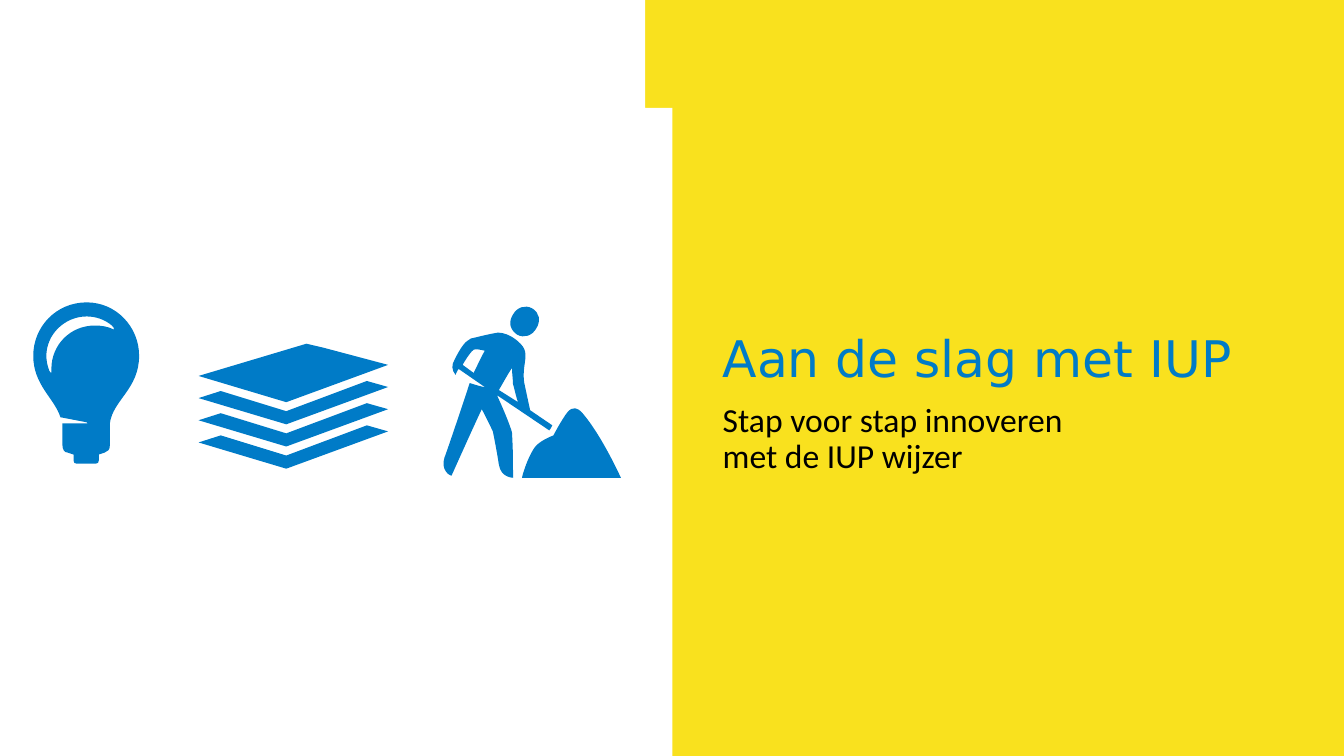
from lxml import etree
from pptx import Presentation
from pptx.dml.color import RGBColor
from pptx.enum.text import MSO_ANCHOR
from pptx.oxml.ns import qn
from pptx.util import Pt

PX = 9144
TOP, BOTTOM = MSO_ANCHOR.TOP, MSO_ANCHOR.BOTTOM
YELLOW = RGBColor(0xF9, 0xE1, 0x1E)
WHITE = RGBColor(0xFF, 0xFF, 0xFF)
BLUE = RGBColor(0x00, 0x7B, 0xC7)
BLACK = RGBColor(0x00, 0x00, 0x00)

PANEL = [(0, 0), (640, 0), (640, 107), (667, 107), (667, 750), (0, 750)]

BULB = [
    (86, 300), (56, 300, 33, 324, 33, 353), (33, 382, 54, 395, 60, 414),
    (86, 419), (87, 419, 87, 420, 87, 420), (62, 420), (62, 442),
    (62, 446, 64, 449, 67, 449), (73, 451), (73, 457),
    (73, 459, 74, 460, 76, 460), (95, 460), (97, 460, 98, 459, 98, 457),
    (98, 451), (104, 449), (107, 448, 109, 446, 109, 442), (109, 420),
    (112, 397, 138, 386, 138, 353), (138, 324, 115, 300, 86, 300),
]
GLINT = [
    (113, 327), (107, 324, 101, 323, 94, 323), (70, 323, 51, 342, 51, 366),
    (51, 367, 51, 368, 51, 370), (51, 370, 49, 369, 49, 368),
    (47, 363, 46, 358, 46, 353), (46, 332, 64, 314, 86, 314),
    (95, 314, 104, 317, 111, 323), (112, 324, 114, 326, 113, 327),
]

SHEET = [(385, 362), (321, 345), (304, 341), (197, 373), (284, 399), (385, 362)]
EDGE = [(284, 30), (219, 10), (197, 17), (284, 43), (385, 6), (364, 0)]
EDGE_TOP, EDGE_GAP, EDGES = 378, 22, 3

HEAD = [
    (513, 332), (520, 336, 528, 333, 532, 326), (537, 318, 535, 310, 528, 306),
    (521, 302, 513, 305, 509, 312), (504, 320, 506, 327, 513, 332),
]
BODY = [
    (493, 392), (545, 427), (546, 426, 547, 424, 548, 422), (526, 407),
    (524, 398, 520, 379, 520, 379), (518, 364, 524, 354, 520, 346),
    (518, 341, 506, 330, 494, 330), (488, 331, 479, 333, 471, 335),
    (468, 335, 467, 336, 464, 338), (459, 341, 453, 353, 451, 357),
    (448, 362, 448, 367, 452, 372), (452, 372, 453, 369, 455, 366),
    (481, 384), (481, 384, 481, 384, 480, 384),
    (475, 383, 466, 380, 466, 380), (461, 396, 442, 452, 441, 454),
    (437, 466, 446, 472, 448, 472), (448, 472, 469, 425, 478, 406),
    (482, 413, 489, 428, 489, 428), (491, 438, 493, 448, 495, 461),
    (497, 474, 509, 474, 509, 474), (509, 455, 509, 447, 508, 429),
    (507, 425, 501, 409, 493, 392),
]
FRONT = [
    (509, 381), (510, 384, 512, 394, 514, 399), (495, 387),
    (499, 380, 504, 371, 508, 365), (508, 370, 509, 377, 509, 381),
]
BACK = [
    (470, 347), (472, 346, 477, 347, 481, 348),
    (477, 355, 473, 364, 470, 370), (459, 362),
    (463, 355, 468, 348, 470, 347),
]
HEAP = [
    (578, 410), (573, 404, 568, 403, 563, 409), (558, 415, 549, 432, 549, 432),
    (549, 432, 538, 436, 532, 442), (524, 451, 517, 475, 518, 474),
    (616, 474), (616, 474, 597, 432, 578, 410),
]


def bend(shape, routes):
    parts = [part for route in routes for part in route[1:]]
    lines = list(shape.element.iter(qn("a:lnTo")))
    left = min(route_x for route in routes for *_, route_x, _ in route) * PX
    top = min(part[-1] for route in routes for part in route) * PX
    for line, part in zip(lines, parts):
        if len(part) == 2:
            continue
        arc = etree.Element(qn("a:cubicBezTo"))
        for x, y in zip(part[::2], part[1::2]):
            etree.SubElement(arc, qn("a:pt"), x=str(x * PX - left), y=str(y * PX - top))
        line.getparent().replace(line, arc)


def draw(shapes, color, *routes):
    first, *rest = [[(p[-2] * PX, p[-1] * PX) for p in route] for route in routes]
    pen = shapes.build_freeform(*first[0])
    pen.add_line_segments(first[1:], close=True)
    for pts in rest:
        pen.move_to(*pts[0])
        pen.add_line_segments(pts[1:], close=True)
    shape = pen.convert_to_shape()
    bend(shape, routes)
    shape.shadow.inherit = False
    shape.fill.solid()
    shape.fill.fore_color.rgb = color
    shape.line.fill.background()


def write(shapes, text, box, *, size, font, color, anchor=TOP):
    frame = shapes.add_textbox(*(n * PX for n in box)).text_frame
    frame.word_wrap = True
    frame.vertical_anchor = anchor
    frame.margin_left = frame.margin_right = 0
    frame.margin_top = frame.margin_bottom = 0
    para = frame.paragraphs[0]
    para.line_spacing = 0.9
    run = para.add_run()
    run.text = text
    run.font.size = Pt(size)
    run.font.name = font
    run.font.color.rgb = color


def stack(shapes):
    group = shapes.add_group_shape().shapes
    for row in reversed(range(EDGES)):
        top = EDGE_TOP + row * EDGE_GAP
        draw(group, BLUE, [(x, y + top) for x, y in EDGE])
    draw(group, BLUE, SHEET)


def digger(shapes):
    group = shapes.add_group_shape().shapes
    draw(group, BLUE, HEAD)
    draw(group, BLUE, BODY, FRONT, BACK)
    draw(group, BLUE, HEAP)


def main():
    deck = Presentation()
    deck.slide_width = 4000 * PX // 3
    deck.slide_height = 750 * PX
    slide = deck.slides.add_slide(deck.slide_layouts[6])
    slide.background.fill.solid()
    slide.background.fill.fore_color.rgb = YELLOW
    shapes = slide.shapes
    draw(shapes, WHITE, PANEL)
    write(shapes, "Stap voor stap innoveren met de IUP wijzer", (717, 400, 387, 200),
          size=24, font="Calibri", color=BLACK)
    write(shapes, "Aan de slag met IUP", (717, 232, 547, 153),
          size=36, font="DejaVu Sans", color=BLUE, anchor=BOTTOM)
    draw(shapes, BLUE, BULB, GLINT)
    stack(shapes)
    digger(shapes)
    deck.save("out.pptx")


if __name__ == "__main__":
    main()
